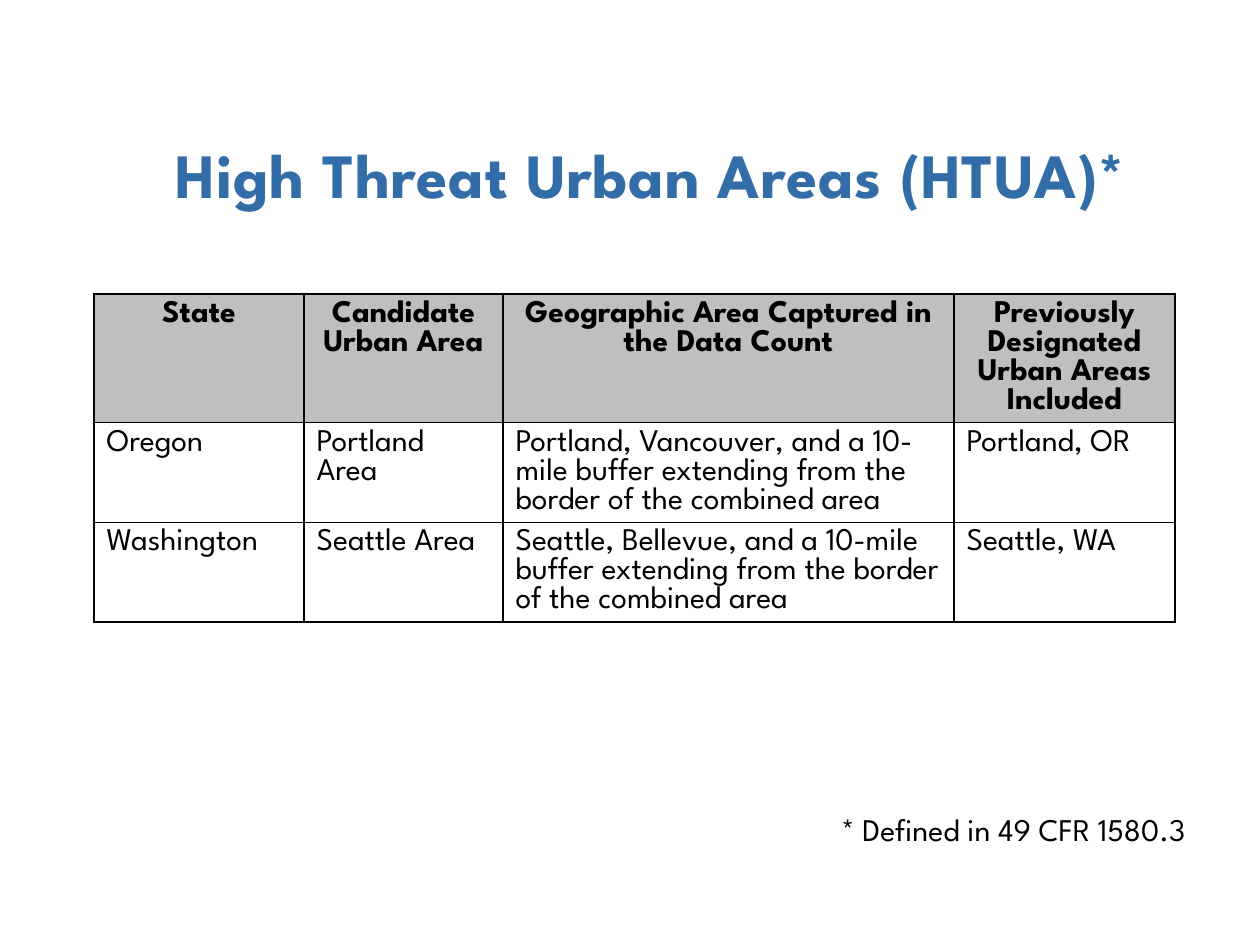
from lxml import etree
from pptx import Presentation
from pptx.dml.color import RGBColor
from pptx.enum.text import MSO_ANCHOR, MSO_AUTO_SIZE, PP_ALIGN
from pptx.oxml.ns import qn
from pptx.util import Pt

PX = 914400 / 126
LEFT, CENTER = PP_ALIGN.LEFT, PP_ALIGN.CENTER
TOP, MIDDLE = MSO_ANCHOR.TOP, MSO_ANCHOR.MIDDLE
FIT_SHAPE = MSO_AUTO_SIZE.SHAPE_TO_FIT_TEXT

COLUMNS = [210, 199, 451, 221]
ROW_HEIGHT = 52
AREAS = [
    ["State", "Candidate Urban Area", "Geographic Area Captured in the Data Count",
     "Previously Designated Urban Areas Included"],
    ["Oregon", "Portland Area",
     "Portland, Vancouver, and a 10-mile buffer extending from the border of the combined area",
     "Portland, OR"],
    ["Washington", "Seattle Area",
     "Seattle, Bellevue, and a 10-mile buffer extending from the border of the combined area",
     "Seattle, WA"],
]


def px(n):
    return round(n * PX)


def rgb(code):
    return RGBColor.from_string(code)


class Deck:
    font = "League Spartan"
    ink = "000000"
    header_fill = "BFBFBF"
    title_stops = [(0.25, "326DA7"), (1, "214D78")]
    size = 18
    title_size = 36

    def __init__(self, width, height):
        self.prs = Presentation()
        self.prs.slide_width, self.prs.slide_height = px(width), px(height)
        self.s = self.prs.slides.add_slide(self.prs.slide_layouts[6])

    def run(self, tf, text, size, bold=False, align=LEFT):
        p = tf.paragraphs[0]
        p.alignment = align
        r = p.add_run()
        r.text = text
        r.font.name, r.font.size, r.font.bold = self.font, Pt(size), bold
        r.font.color.rgb = rgb(self.ink)
        return r

    def box(self, x, y, w, h, wrap, anchor=TOP):
        tf = self.s.shapes.add_textbox(px(x), px(y), px(w), px(h)).text_frame
        tf.word_wrap = wrap
        tf.vertical_anchor = anchor
        return tf

    def title(self, text, x, y, w, h):
        tf = self.box(x, y, w, h, True, MIDDLE)
        r = self.run(tf, text, self.title_size, True, CENTER)
        fill = r.font.fill
        fill.gradient()
        fill.gradient_angle = 270
        for stop, (position, color) in zip(fill.gradient_stops, self.title_stops):
            stop.position = position
            stop.color.rgb = rgb(color)
        r.font._element.set("spc", "50")

    def note(self, text, x, y, w, h):
        tf = self.box(x, y, w, h, False)
        tf.auto_size = FIT_SHAPE
        self.run(tf, text, self.size)

    def borders(self, cell):
        tc_pr = cell._tc.get_or_add_tcPr()
        for side in ("L", "R", "T", "B"):
            ln = etree.SubElement(tc_pr, qn(f"a:ln{side}"), w=str(Pt(1)))
            fill = etree.SubElement(ln, qn("a:solidFill"))
            etree.SubElement(fill, qn("a:srgbClr"), val=self.ink)

    def table(self, rows, x, y, widths, row_height):
        frame = self.s.shapes.add_table(len(rows), len(widths), px(x), px(y),
                                        px(sum(widths)), px(row_height * len(rows)))
        table = frame.table
        table.horz_banding = False
        for column, width in zip(table.columns, widths):
            column.width = px(width)
        for i, row in enumerate(rows):
            header = i == 0
            table.rows[i].height = px(row_height)
            for j, text in enumerate(row):
                cell = table.cell(i, j)
                self.borders(cell)
                if header:
                    cell.fill.solid()
                    cell.fill.fore_color.rgb = rgb(self.header_fill)
                else:
                    cell.fill.background()
                self.run(cell.text_frame, text, self.size, header,
                         CENTER if header else LEFT)


def main():
    deck = Deck(1260, 945)
    deck.table(AREAS, 94, 294, COLUMNS, ROW_HEIGHT)
    deck.note("* Defined in 49 CFR 1580.3", 829, 804, 373, 50)
    deck.title("High Threat Urban Areas (HTUA)*", 84, 94, 1134, 158)
    deck.prs.save("out.pptx")


if __name__ == "__main__":
    main()
